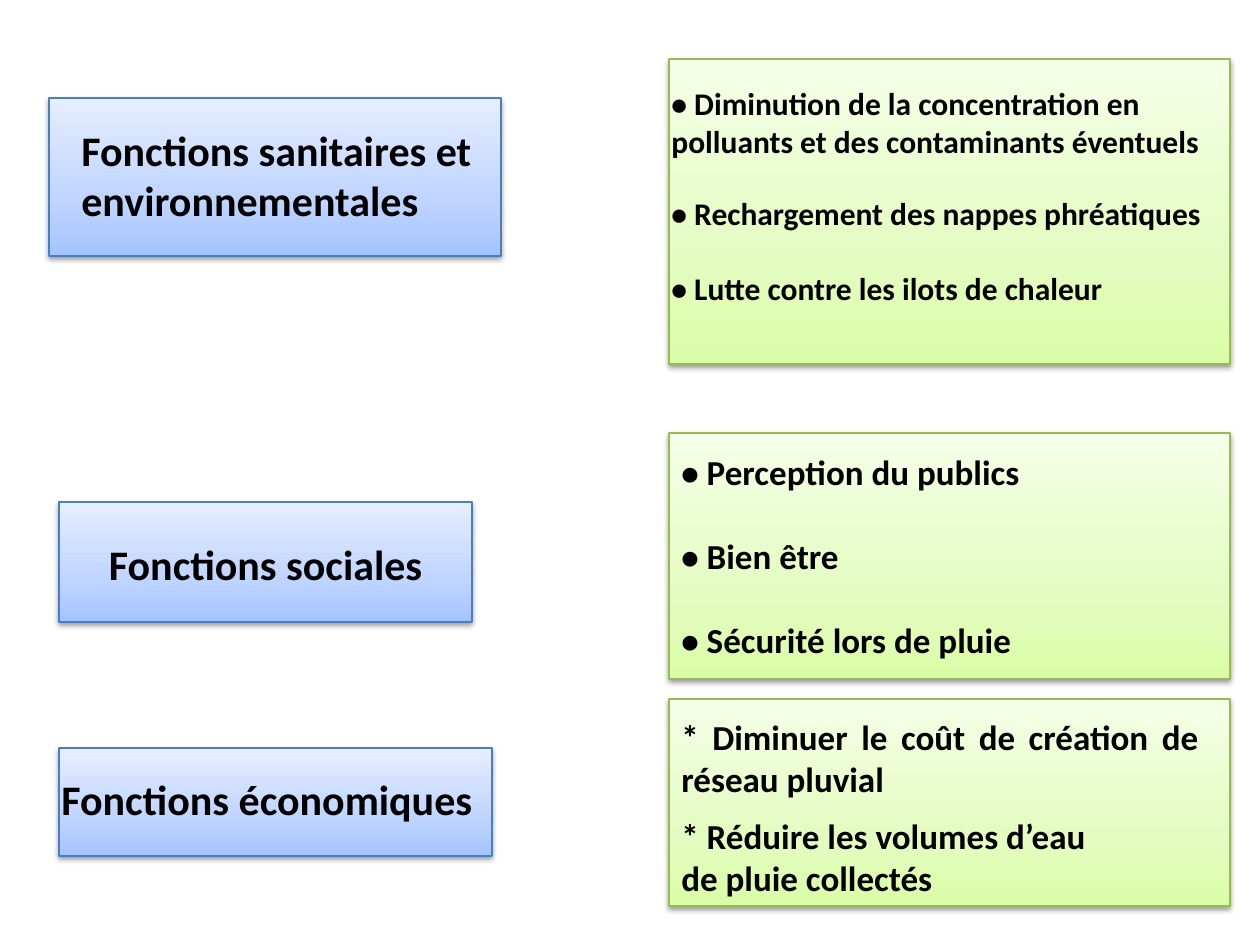
from pptx import Presentation, oxml, util as u
from pptx.dml.color import RGBColor
from pptx.enum import shapes, text
from pptx.oxml.ns import nsdecls

PX = 914400 / 126
L, C, J = text.PP_ALIGN.LEFT, text.PP_ALIGN.CENTER, text.PP_ALIGN.JUSTIFY
BLUE = ("4B7EBC", ["A4C4FF", "BFD4FF", "E6EEFF"])
GREEN = ("98B955", ["DAFDA7", "E4FCC2", "F5FFE7"])


def emu(vals):
    return [round(v * PX) for v in vals]


def rgb(code):
    return RGBColor.from_string(code)


prs = Presentation()
prs.slide_width, prs.slide_height = emu((1260, 945))
slide = prs.slides.add_slide(prs.slide_layouts[6])

# Each panel: colours, place, then its texts (place, size, alignment, gap, lines)
panels = [
    (BLUE, (49, 98, 452, 158), [
        ((69, 118, 493, 115), 24, L, 0,
         ["Fonctions sanitaires et environnementales"])]),
    (GREEN, (669, 59, 561, 305), [
        ((659, 78, 561, 89), 18, L, 0,
         ["• Diminution de la concentration en polluants "
          "et des contaminants éventuels"]),
        ((659, 188, 571, 126), 18, L, 21,
         ["• Rechargement des nappes phréatiques",
          "• Lutte contre les ilots de chaleur"])]),
    (BLUE, (59, 502, 413, 120), [
        ((69, 532, 403, 63), 24, C, 0, ["Fonctions sociales "])]),
    (GREEN, (669, 433, 561, 246), [
        ((669, 444, 522, 224), 20, L, 24,
         ["• Perception du publics", "• Bien être",
          "• Sécurité lors de pluie"])]),
    (BLUE, (59, 748, 433, 108), [
        ((49, 767, 444, 63), 24, L, 0, ["Fonctions économiques"])]),
    (GREEN, (669, 699, 561, 207), [
        ((669, 709, 542, 97), 20, J, 0,
         ["* Diminuer le coût de création de réseau pluvial "]),
        ((669, 808, 591, 97), 20, J, 0,
         ["* Réduire les volumes d’eau", "de pluie collectés"])]),
]

for (edge, tints), place, notes in panels:
    box = slide.shapes.add_shape(shapes.MSO_SHAPE.RECTANGLE, *emu(place))
    box.line.color.rgb = rgb(edge)
    box.line.width = u.Pt(0.75)
    box.shadow.inherit = False

    stops = "".join(
        f'<a:gs pos="{pos}"><a:srgbClr val="{tint}"/></a:gs>'
        for pos, tint in zip((0, 35000, 100000), tints))
    props = box.element.spPr
    props.insert(2, oxml.parse_xml(
        f'<a:gradFill {nsdecls("a")} rotWithShape="1"><a:gsLst>{stops}</a:gsLst>'
        '<a:lin ang="16200000" scaled="0"/></a:gradFill>'))
    props[-1].append(oxml.parse_xml(
        f'<a:outerShdw {nsdecls("a")} blurRad="{u.Pt(3.1)}" dist="{u.Pt(1.6)}" '
        'dir="5400000" rotWithShape="0"><a:srgbClr val="000000">'
        '<a:alpha val="38000"/></a:srgbClr></a:outerShdw>'))

    for spot, size, align, gap, lines in notes:
        frame = slide.shapes.add_textbox(*emu(spot)).text_frame
        frame.word_wrap = True
        frame.auto_size = text.MSO_AUTO_SIZE.SHAPE_TO_FIT_TEXT
        for i, line in enumerate(lines):
            para = frame.add_paragraph() if i else frame.paragraphs[0]
            para.alignment = align
            if i:
                para.space_before = u.Pt(gap)
            run = para.add_run()
            run.text = line
            run.font.name = "Calibri"
            run.font.size = u.Pt(size)
            run.font.bold = True
            run.font.color.rgb = rgb("000000")

prs.save("out.pptx")
